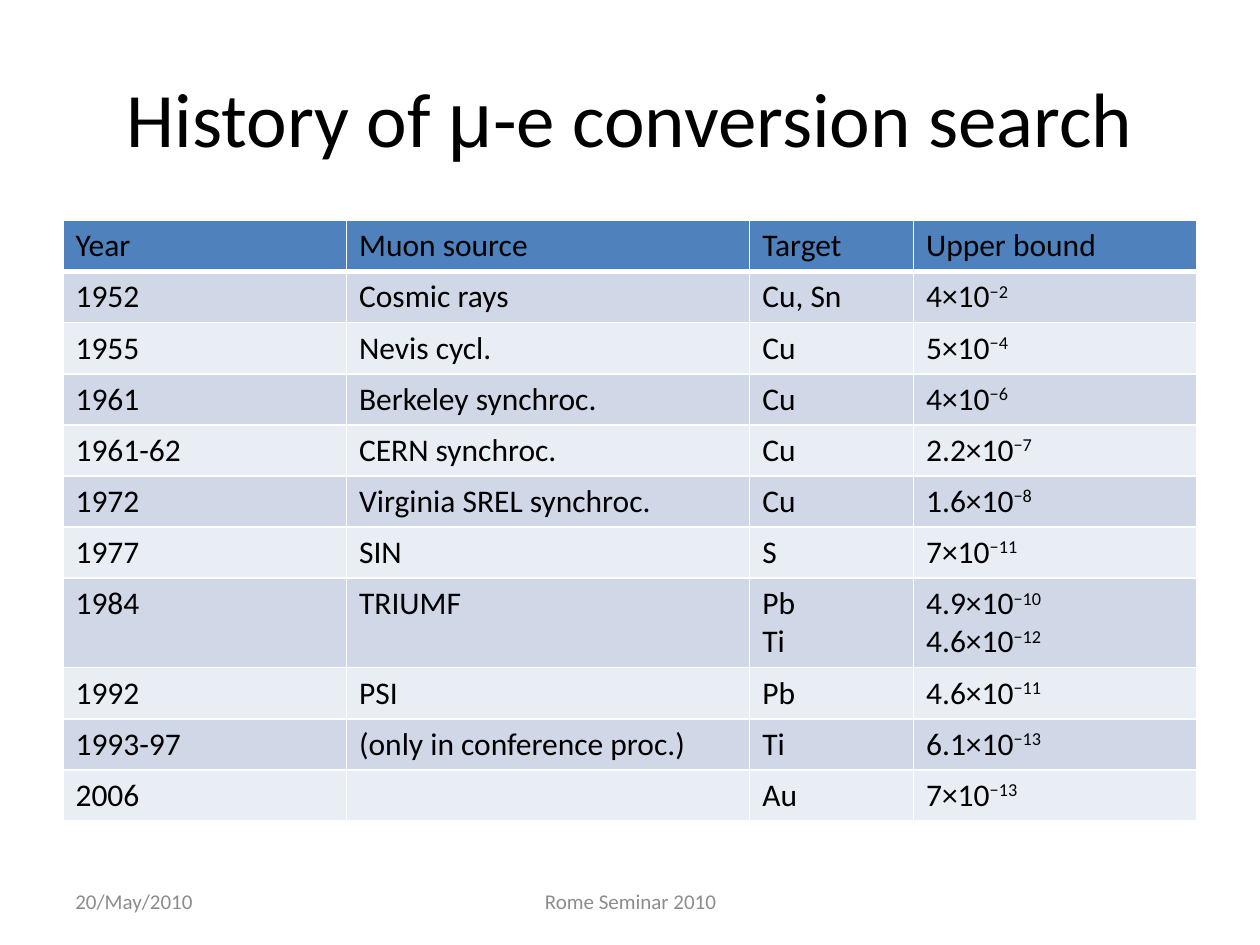
from lxml import etree
from pptx import Presentation
from pptx.dml.color import RGBColor
from pptx.enum.text import MSO_ANCHOR, PP_ALIGN
from pptx.oxml.ns import qn
from pptx.util import Inches, Pt

LEFT, CENTER = PP_ALIGN.LEFT, PP_ALIGN.CENTER
MIDDLE = MSO_ANCHOR.MIDDLE
TITLE_ONLY = 5

COLORS = {
    "text": "000000",
    "footer": "8C8C8C",
    "header": "4F81BD",
    "band_dark": "D0D8E8",
    "band_light": "E9EDF4",
    "border": "FFFFFF",
}

HEADER = ("Year", "Muon source", "Target", "Upper bound")
# Each upper bound is written as mantissa^exponent; a line break starts a paragraph
SEARCHES = [
    ("1952", "Cosmic rays", "Cu, Sn", "4×10^−2"),
    ("1955", "Nevis cycl.", "Cu", "5×10^−4"),
    ("1961", "Berkeley synchroc.", "Cu", "4×10^−6"),
    ("1961-62", "CERN synchroc.", "Cu", "2.2×10^−7"),
    ("1972", "Virginia SREL synchroc.", "Cu", "1.6×10^−8"),
    ("1977", "SIN", "S", "7×10^−11"),
    ("1984", "TRIUMF", "Pb\nTi", "4.9×10^−10\n4.6×10^−12"),
    ("1992", "PSI", "Pb", "4.6×10^−11"),
    ("1993-97", "(only in conference proc.)", "Ti", "6.1×10^−13"),
    ("2006", "", "Au", "7×10^−13"),
]
COLUMN_WIDTHS = (2.25, 3.2, 1.3, 2.25)


class SlideBuilder:
    font = "Calibri"

    def __init__(self, slide):
        self.slide = slide

    def add_run(self, p, text, size, color="text", font=None):
        r = p.add_run()
        r.text = text
        r.font.size = Pt(size)
        r.font.name = font or self.font
        r.font.color.rgb = RGBColor.from_string(COLORS[color])
        return r

    def title(self, parts, x, y, w, h):
        sp = self.slide.shapes.title
        sp.left, sp.top, sp.width, sp.height = map(Inches, (x, y, w, h))
        sp.text_frame.vertical_anchor = MIDDLE
        p = sp.text_frame.paragraphs[0]
        p.alignment = CENTER
        for text, font in parts:
            self.add_run(p, text, 44, font=font)

    def footer(self, text, x, w, align):
        sp = self.slide.shapes.add_textbox(Inches(x), Inches(6.95), Inches(w), Inches(0.4))
        tf = sp.text_frame
        tf.word_wrap = True
        tf.vertical_anchor = MIDDLE
        p = tf.paragraphs[0]
        p.alignment = align
        self.add_run(p, text, 12, "footer")

    def border(self, cell, bottom_width):
        tcPr = cell._tc.get_or_add_tcPr()
        for tag, width in (("lnL", 1), ("lnR", 1), ("lnT", 1), ("lnB", bottom_width)):
            ln = etree.SubElement(tcPr, qn(f"a:{tag}"), w=str(Pt(width)))
            fill = etree.SubElement(ln, qn("a:solidFill"))
            etree.SubElement(fill, qn("a:srgbClr"), val=COLORS["border"])

    def cell(self, cell, text, fill, bottom_width):
        self.border(cell, bottom_width)
        cell.fill.solid()
        cell.fill.fore_color.rgb = RGBColor.from_string(COLORS[fill])
        tf = cell.text_frame
        for i, line in enumerate(text.split("\n")):
            p = tf.add_paragraph() if i else tf.paragraphs[0]
            p.font.size = Pt(18)
            base, _, exponent = line.partition("^")
            if base:
                self.add_run(p, base, 18)
            if exponent:
                r = self.add_run(p, exponent, 18)
                r.font._element.set("baseline", "30000")

    def table(self, rows, widths, x, y, h):
        frame = self.slide.shapes.add_table(
            len(rows), len(widths), Inches(x), Inches(y), Inches(sum(widths)), Inches(h))
        table = frame.table
        table.first_row = table.horz_banding = False
        for column, width in zip(table.columns, widths):
            column.width = Inches(width)
        for i, row in enumerate(rows):
            fill = "header" if i == 0 else "band_dark" if i % 2 else "band_light"
            for j, text in enumerate(row):
                self.cell(table.cell(i, j), text, fill, 1 if i else 3)


def main():
    prs = Presentation()
    prs.slide_width, prs.slide_height = Inches(10), Inches(7.5)
    s = SlideBuilder(prs.slides.add_slide(prs.slide_layouts[TITLE_ONLY]))

    # Title
    s.title([("History of ", None), ("μ", "Arial"), ("-e conversion search", None)],
            0.5, 0.3, 9, 1.25)

    # Table of searches; the two-line row grows to fit
    s.table([HEADER] + SEARCHES, COLUMN_WIDTHS, 0.5, 1.75, 4.46)

    # Footer
    s.footer("20/May/2010", 0.5, 2.33, LEFT)
    s.footer("Rome Seminar 2010", 3.42, 3.17, CENTER)

    prs.save("out.pptx")


if __name__ == "__main__":
    main()
